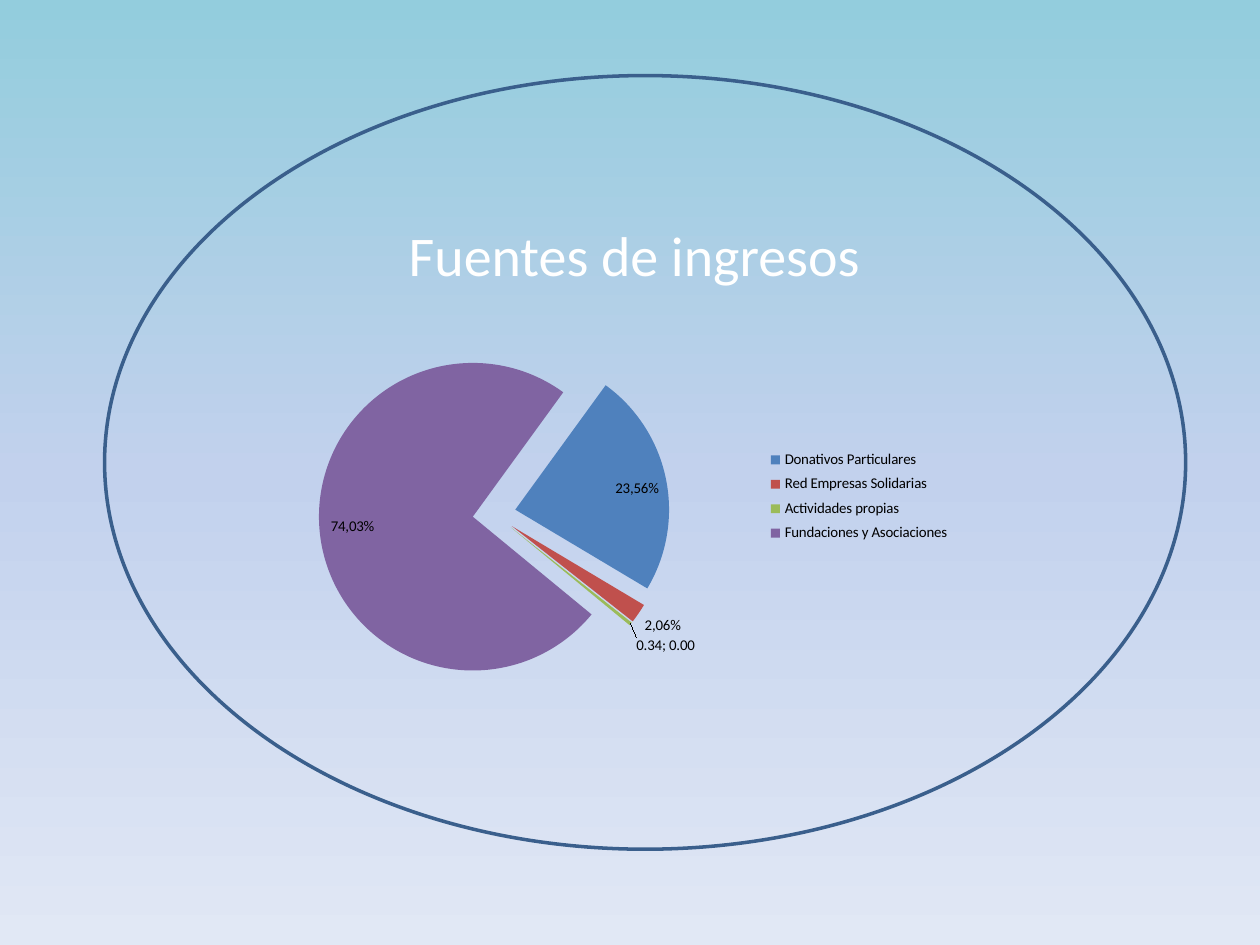
from copy import deepcopy

from pptx import Presentation
from pptx.chart.data import CategoryChartData
from pptx.dml.color import RGBColor
from pptx.enum.chart import XL_CHART_TYPE, XL_LABEL_POSITION, XL_LEGEND_POSITION
from pptx.enum.shapes import MSO_SHAPE
from pptx.enum.text import PP_ALIGN
from pptx.oxml import parse_xml
from pptx.oxml.ns import nsdecls, qn
from pptx.util import Inches, Pt

PIE = XL_CHART_TYPE.PIE_EXPLODED
INSIDE = XL_LABEL_POSITION.INSIDE_END
OUTSIDE = XL_LABEL_POSITION.OUTSIDE_END
FONT = "Calibri"
COLORS = {"sky": "93CDDD", "mist": "C2D1ED", "pale": "E1E8F5",
          "outline": "3A5F8C", "title": "FFFFFF", "text": "000000"}
# category, value, slice colour, label text (None shows value and share), label place
SOURCES = [
    ("Donativos Particulares", 23.56, "4F81BD", "23,56%", INSIDE),
    ("Red Empresas Solidarias", 2.06, "C0504D", "2,06%", OUTSIDE),
    ("Actividades propias", 0.34, "9BBB59", None, OUTSIDE),
    ("Fundaciones y Asociaciones", 74.03, "8064A2", " 74,03%", INSIDE),
]
NUMBER_FORMAT = "#,##0.00"
LABEL_FORMAT = {"name": FONT, "size": Pt(8.5)}


def rgb(name):
    return RGBColor.from_string(COLORS[name])


def set_font(font, color, values):
    for attribute, value in values.items():
        setattr(font, attribute, value)
    font.color.rgb = rgb(color)


def chart_element(tag, value):
    return parse_xml(f'<c:{tag} {nsdecls("c")} val="{value}"/>')


def manual_layout(**values):
    """Return a chart layout element; values follow the order of the schema."""
    parts = "".join(f'<c:{tag} val="{value}"/>' for tag, value in values.items())
    return parse_xml(f'<c:layout {nsdecls("c")}><c:manualLayout>{parts}'
                     "</c:manualLayout></c:layout>")


def paint_background(slide):
    fill = slide.background.fill
    fill.gradient()
    fill.gradient_angle = 270
    stop_list = next(slide.element.iter(qn("a:gsLst")))
    stop_list.append(deepcopy(stop_list[-1]))
    stops = zip(fill.gradient_stops, ("sky", "mist", "pale"), (0, 0.5, 1))
    for stop, color, position in stops:
        stop.color.rgb = rgb(color)
        stop.position = position


def add_ellipse(slide, box):
    ellipse = slide.shapes.add_shape(MSO_SHAPE.OVAL, *box)
    ellipse.shadow.inherit = False
    ellipse.fill.background()
    ellipse.line.color.rgb = rgb("outline")
    ellipse.line.width = Pt(2)


def add_title(slide, box):
    frame = slide.shapes.add_textbox(*box).text_frame
    frame.word_wrap = True
    paragraph = frame.paragraphs[0]
    paragraph.alignment = PP_ALIGN.CENTER
    run = paragraph.add_run()
    run.text = "Fuentes de ingresos"
    set_font(run.font, "title", {"name": FONT, "size": Pt(32)})


def format_labels(series):
    for index, (_, _, color, text, place) in enumerate(SOURCES):
        point = series.points[index]
        point.format.fill.solid()
        point.format.fill.fore_color.rgb = RGBColor.from_string(color)
        label = point.data_label
        if text:
            label.text_frame.text = text
            set_font(label.text_frame.paragraphs[0].runs[0].font, "text", LABEL_FORMAT)
        else:
            set_font(label.font, "text", LABEL_FORMAT)
        label.position = place

    labels = series.data_labels
    for attribute, value in {"show_value": True, "show_percentage": True,
                             "number_format": NUMBER_FORMAT,
                             "number_format_is_linked": False}.items():
        setattr(labels, attribute, value)
    set_font(labels.font, "text", LABEL_FORMAT)
    for label in labels._element.findall(qn("c:dLbl")):
        index = label.find(qn("c:idx"))
        if SOURCES[int(index.get("val"))][3] is None:
            index.addnext(manual_layout(x=0, y=0.02))
            label.find(qn("c:showPercent")).set("val", "1")
            label.append(parse_xml(f'<c:separator {nsdecls("c")}>; </c:separator>'))


def add_income_chart(slide, box):
    data = CategoryChartData(number_format=NUMBER_FORMAT)
    data.categories = [source[0] for source in SOURCES]
    data.add_series("Series 1", [source[1] for source in SOURCES])
    chart = slide.shapes.add_chart(PIE, *box, data).chart
    chart.has_title = False
    set_font(chart.font, "text", {"name": FONT, "size": Pt(10)})

    plot = chart.plots[0]
    plot.vary_by_categories = True
    series = plot.series[0]
    format_labels(series)
    for old in series._element.findall(qn("c:explosion")):
        series._element.remove(old)
    series._element.find(qn("c:dPt")).addprevious(chart_element("explosion", 14))
    pie = plot._element
    for old in pie.findall(qn("c:firstSliceAng")):
        pie.remove(old)
    pie.append(chart_element("firstSliceAng", 36))

    plot_area = pie.getparent()
    for old in plot_area.findall(qn("c:layout")):
        plot_area.remove(old)
    plot_area.insert(0, manual_layout(layoutTarget="inner", xMode="edge", yMode="edge",
                                      x=0.07, y=0.08, w=0.48, h=0.8))

    chart.has_legend = True
    legend = chart.legend
    legend.position = XL_LEGEND_POSITION.RIGHT
    legend.include_in_layout = False
    set_font(legend.font, "text", LABEL_FORMAT)
    for old in legend._element.findall(qn("c:layout")):
        legend._element.remove(old)
    legend._element.find(qn("c:legendPos")).addnext(
        manual_layout(xMode="edge", yMode="edge", x=0.66, y=0.32, w=0.28, h=0.24))


def main():
    presentation = Presentation()
    presentation.slide_width = Inches(10)
    presentation.slide_height = Inches(7.5)
    slide = presentation.slides.add_slide(presentation.slide_layouts[6])
    paint_background(slide)
    add_ellipse(slide, [Inches(n) for n in (0.83, 0.6, 8.58, 6.14)])
    add_title(slide, [Inches(n) for n in (2.24, 1.7, 5.59, 0.64)])
    add_income_chart(slide, [Inches(n) for n in (2.09, 2.41, 5.91, 3.48)])
    presentation.save("out.pptx")


if __name__ == "__main__":
    main()
